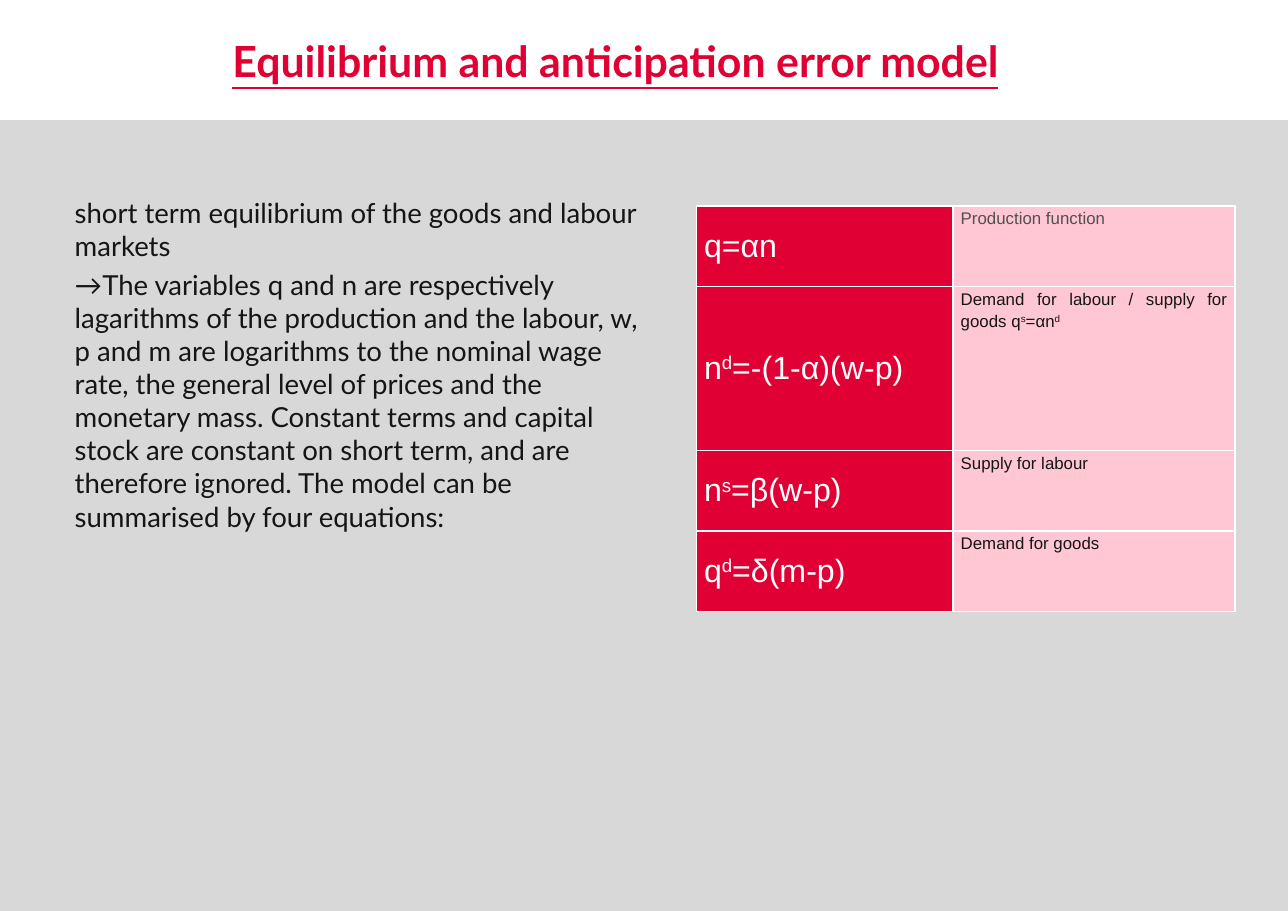
"""Builds the slide on the equilibrium and anticipation error model."""
import pptx
import pptx.util
import pptx.dml.color
import pptx.enum.shapes
import pptx.enum.text
import pptx.oxml
import pptx.oxml.ns

Inches = pptx.util.Inches
Pt = pptx.util.Pt
Align = pptx.enum.text.PP_ALIGN
Anchor = pptx.enum.text.MSO_ANCHOR

HUES = {"red": "E00034", "pink": "FFC6D3", "grey": "D8D8D8",
        "ink": "151515", "soft": "505050", "white": "FFFFFF"}

TITLE = "Equilibrium and anticipation error model"
BODY = [
    "short term equilibrium of the goods and labour markets",
    "→The variables q and n are respectively lagarithms of the production "
    "and the labour, w, p and m are logarithms to the nominal wage rate, the "
    "general level of prices and the monetary mass. Constant terms and "
    "capital stock are constant on short term, and are therefore ignored. "
    "The model can be summarised by four equations:",
]
MODEL = [
    ("q=αn", "Production function", "soft", 0.73),
    ("n^d^=-(1-α)(w-p)",
     "Demand for labour / supply for goods q^s^=αn^d^", "ink", 1.49),
    ("n^s^=β(w-p)", "Supply for labour", "ink", 0.73),
    ("q^d^=δ(m-p)", "Demand for goods", "ink", 0.73),
]


class Deck:
    """Holds the style and the current slide."""

    def __init__(self, wide, high):
        self.show = pptx.Presentation()
        self.show.slide_width = Inches(wide)
        self.show.slide_height = Inches(high)
        self.slide = self.show.slides.add_slide(self.show.slide_layouts[5])

    def hue(self, name):
        """Return a named colour."""
        return pptx.dml.color.RGBColor.from_string(HUES[name])

    def words(self, para, text, face, size, hue):
        """Fill a paragraph, raising the parts between carets."""
        for spot, part in enumerate(text.split("^")):
            if part:
                run = para.add_run()
                run.text = part
                if spot % 2:
                    run._r.get_or_add_rPr().set("baseline", "30000")
        para.font.name = face
        para.font.size = Pt(size)
        para.font.color.rgb = self.hue(hue)

    def title(self, text, left, top, wide, high):
        """Place and format the title."""
        box = self.slide.shapes.title
        box.left, box.top = Inches(left), Inches(top)
        box.width, box.height = Inches(wide), Inches(high)
        frame = box.text_frame
        frame.auto_size = pptx.enum.text.MSO_AUTO_SIZE.NONE
        frame.vertical_anchor = Anchor.BOTTOM
        para = frame.paragraphs[0]
        para.alignment = Align.LEFT
        self.words(para, text, "Lato", 28, "red")
        para.font.bold = True
        para.font.underline = True

    def panel(self, left, top, wide, high):
        """Add the plain backdrop."""
        box = self.slide.shapes.add_shape(
            pptx.enum.shapes.MSO_SHAPE.RECTANGLE,
            Inches(left), Inches(top), Inches(wide), Inches(high))
        box.shadow.inherit = False
        box.fill.solid()
        box.fill.fore_color.rgb = self.hue("grey")
        box.line.fill.background()

    def text(self, lines, left, top, wide, high):
        """Add a box of running text."""
        frame = self.slide.shapes.add_textbox(
            Inches(left), Inches(top), Inches(wide), Inches(high)).text_frame
        frame.word_wrap = True
        for spot, line in enumerate(lines):
            para = frame.add_paragraph() if spot else frame.paragraphs[0]
            if spot:
                para.space_before = Pt(4)
            self.words(para, line, "Lato", 18, "ink")

    def cell(self, cell, text, size, hue, fill):
        """Fill one table cell and draw its borders."""
        cell.margin_left = cell.margin_right = Inches(0.07)
        cell.margin_top = cell.margin_bottom = 0
        para = cell.text_frame.paragraphs[0]
        para.alignment = Align.JUSTIFY
        self.words(para, text, "Arial", size, hue)
        props = cell._tc.get_or_add_tcPr()
        for side in ("lnL", "lnR", "lnT", "lnB"):
            props.append(pptx.oxml.parse_xml(
                f'<a:{side} {pptx.oxml.ns.nsdecls("a")} w="12700"><a:solidFill>'
                f'<a:srgbClr val="{HUES["white"]}"/></a:solidFill></a:{side}>'))
        cell.fill.solid()
        cell.fill.fore_color.rgb = self.hue(fill)

    def table(self, rows, left, top, widths):
        """Add the table of equations and their meanings."""
        high = sum(row[-1] for row in rows)
        grid = self.slide.shapes.add_table(
            len(rows), len(widths), Inches(left), Inches(top),
            Inches(sum(widths)), Inches(high)).table
        grid.first_row = grid.horz_banding = False
        for col, wide in zip(grid.columns, widths):
            col.width = Inches(wide)
        for spot, (rule, note, hue, tall) in enumerate(rows):
            grid.rows[spot].height = Inches(tall)
            math, gloss = grid.cell(spot, 0), grid.cell(spot, 1)
            self.cell(math, rule, 21, "white", "red")
            math.vertical_anchor = Anchor.MIDDLE
            self.cell(gloss, note, 11, hue, "pink")
            gloss.text_frame.paragraphs[0].line_spacing = Pt(14.5)


def main():
    """Build and save the slide."""
    deck = Deck(11.69, 8.27)
    deck.panel(0, 1.09, 11.69, 7.18)
    deck.title(TITLE, 2.01, 0.16, 9.6, 0.67)
    deck.table(MODEL, 6.32, 1.87, (2.33, 2.56))
    deck.text(BODY, 0.58, 1.73, 5.38, 5.66)
    deck.show.save("out.pptx")


if __name__ == "__main__":
    main()
